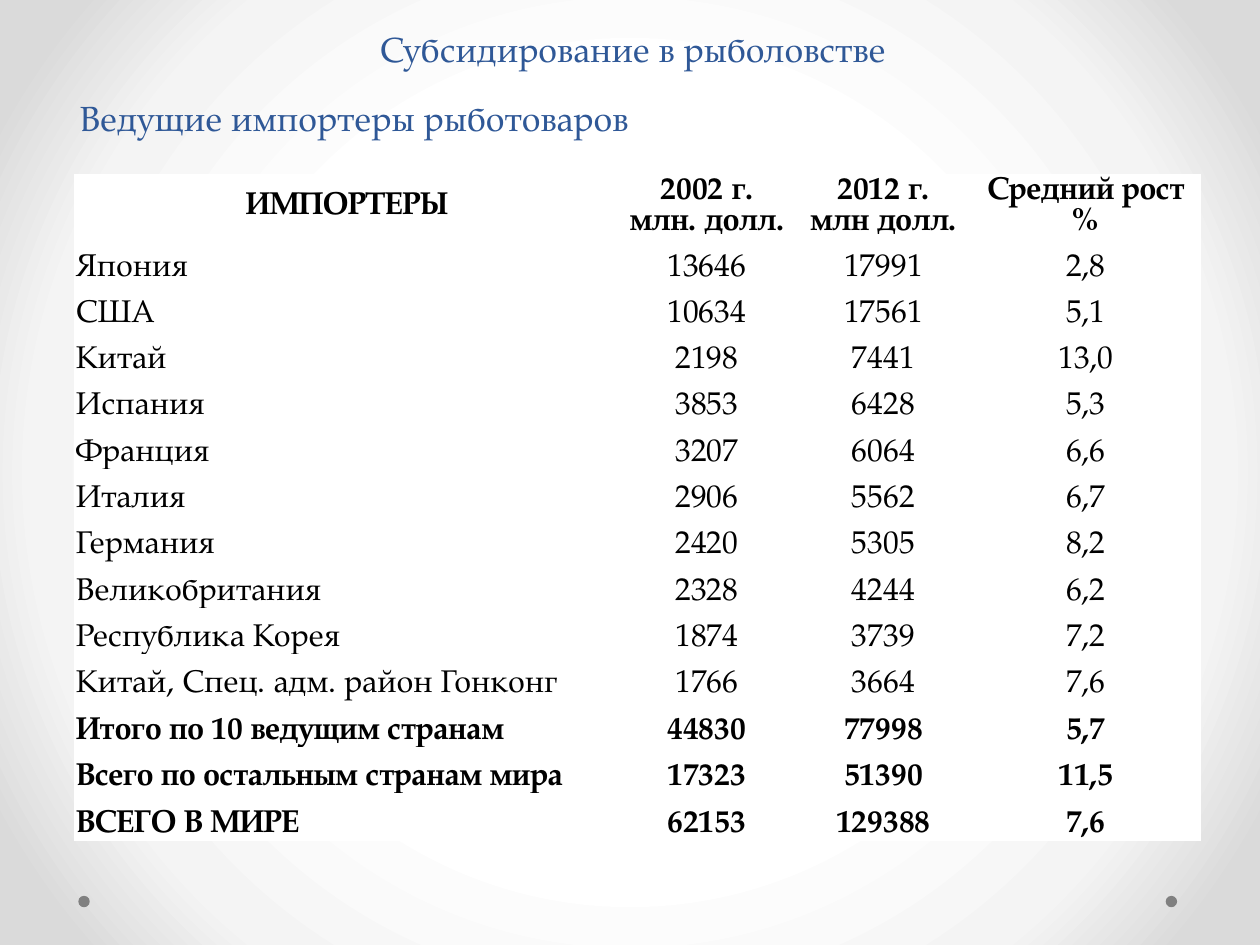
from pptx import Presentation
from pptx.dml.color import RGBColor
from pptx.enum.shapes import MSO_SHAPE
from pptx.enum.text import MSO_ANCHOR, MSO_AUTO_SIZE, PP_ALIGN
from pptx.oxml import parse_xml
from pptx.oxml.ns import nsdecls
from pptx.util import Cm, Pt

# Content
HEADING = "Субсидирование в рыболовстве"
TITLE = "Ведущие импортеры рыботоваров"
ROWS = [
    ("ИМПОРТЕРЫ", "2002 г.\nмлн. долл.", "2012 г.\nмлн долл.", "Средний рост\n%"),
    ("Япония", "13646", "17991", "2,8"),
    ("США", "10634", "17561", "5,1"),
    ("Китай", "2198", "7441", "13,0"),
    ("Испания", "3853", "6428", "5,3"),
    ("Франция", "3207", "6064", "6,6"),
    ("Италия", "2906", "5562", "6,7"),
    ("Германия", "2420", "5305", "8,2"),
    ("Великобритания", "2328", "4244", "6,2"),
    ("Республика Корея", "1874", "3739", "7,2"),
    ("Китай, Спец. адм. район Гонконг", "1766", "3664", "7,6"),
    ("Итого по 10 ведущим странам", "44830", "77998", "5,7"),
    ("Всего по остальным странам мира", "17323", "51390", "11,5"),
    ("ВСЕГО В МИРЕ", "62153", "129388", "7,6"),
]
TOTALS = 3

# Look
FONT = "TeX Gyre Pagella"
COLORS = {"title": "2F5897", "text": "000000", "cell": "FFFFFF", "dot": "808080"}
STOPS = [(50, "FFFFFF"), (76, "F4F4F4"), (92, "DADADA")]
WIDTHS = [10.97, 3.56, 3.56, 4.6]
TABLE_H, HEAD_H = 13.43, 1.29
ROW_H = (TABLE_H - HEAD_H) / (len(ROWS) - 1)
INSETS = {"margin_left": Cm(0.03), "margin_right": Cm(0.03),
          "margin_top": Cm(0.03), "margin_bottom": 0}


def color(name):
    return RGBColor.from_string(COLORS[name])


def assign(item, values):
    for key, value in values.items():
        setattr(item, key, value)


def write(frame, text, size, tint, align, bold=False):
    frame.text = text
    for para in frame.paragraphs:
        para.alignment = align
        for run in para.runs:
            assign(run.font, {"name": FONT, "size": Pt(size), "bold": bold})
            run.font.color.rgb = color(tint)


def label(shape, box, text, align):
    assign(shape, dict(zip(("left", "top", "width", "height"), map(Cm, box))))
    assign(shape.text_frame, {"word_wrap": True, "auto_size": MSO_AUTO_SIZE.NONE,
                              "vertical_anchor": MSO_ANCHOR.BOTTOM})
    write(shape.text_frame, text, 20, "title", align)


def border(cell):
    props = cell._tc.get_or_add_tcPr()
    for side in "LRTB":
        props.append(parse_xml(
            f'<a:ln{side} {nsdecls("a")} w="12700"><a:solidFill>'
            f'<a:srgbClr val="{COLORS["cell"]}"/></a:solidFill></a:ln{side}>'))


deck = Presentation()
assign(deck, {"slide_width": Cm(25.4), "slide_height": Cm(19.05)})
slide = deck.slides.add_slide(deck.slide_layouts[5])

# Radial background
stops = "".join(f'<a:gs pos="{pos * 1000}"><a:srgbClr val="{tint}"/></a:gs>'
                for pos, tint in STOPS)
slide._element.cSld.insert(0, parse_xml(
    f'<p:bg {nsdecls("p", "a")}><p:bgPr><a:gradFill rotWithShape="1">'
    f'<a:gsLst>{stops}</a:gsLst><a:path path="circle">'
    '<a:fillToRect l="50000" t="50000" r="50000" b="50000"/></a:path>'
    '</a:gradFill><a:effectLst/></p:bgPr></p:bg>'))

# Corner dots
for left in (23.5, 1.58):
    dot = slide.shapes.add_shape(MSO_SHAPE.OVAL, Cm(left), Cm(18.06), Cm(0.23), Cm(0.23))
    dot.shadow.inherit = False
    dot.fill.solid()
    dot.fill.fore_color.rgb = color("dot")
    dot.line.fill.background()

# Title and heading
label(slide.shapes.title, (1.35, 1.91, 24.18, 1), TITLE, PP_ALIGN.LEFT)
label(slide.shapes.add_textbox(0, 0, 0, 0), (1.33, 0.33, 22.86, 1.2),
      HEADING, PP_ALIGN.CENTER)

# Table of importers
table = slide.shapes.add_table(len(ROWS), len(WIDTHS), Cm(1.5), Cm(3.52),
                               Cm(sum(WIDTHS)), Cm(TABLE_H)).table
assign(table, {"first_row": False, "horz_banding": False})
for col, width in zip(table.columns, WIDTHS):
    col.width = Cm(width)
for i, row in enumerate(ROWS):
    table.rows[i].height = Cm(ROW_H if i else HEAD_H)
    bold = i == 0 or i >= len(ROWS) - TOTALS
    for j, text in enumerate(row):
        cell = table.cell(i, j)
        border(cell)
        cell.fill.solid()
        cell.fill.fore_color.rgb = color("cell")
        assign(cell, INSETS)
        cell.vertical_anchor = MSO_ANCHOR.BOTTOM if i or j else MSO_ANCHOR.MIDDLE
        align = PP_ALIGN.LEFT if i and not j else PP_ALIGN.CENTER
        write(cell.text_frame, text, 18, "text", align, bold)

deck.save("out.pptx")
